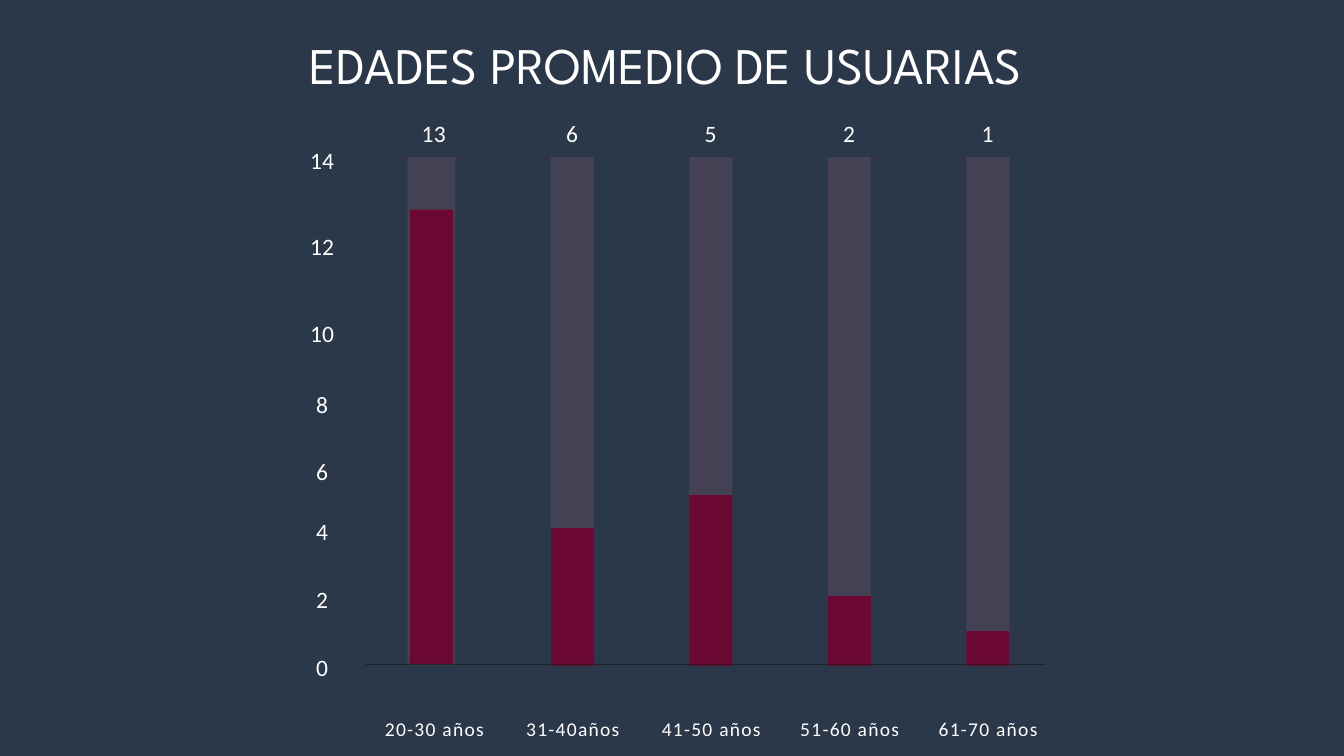
from lxml import etree
from pptx import Presentation
from pptx.dml.color import RGBColor
from pptx.enum.shapes import MSO_SHAPE
from pptx.enum.text import MSO_ANCHOR, MSO_AUTO_SIZE, PP_ALIGN
from pptx.oxml.ns import qn
from pptx.util import Inches, Pt

RECT = MSO_SHAPE.RECTANGLE
TOP = MSO_ANCHOR.TOP
CENTER = PP_ALIGN.CENTER
NO_FIT = MSO_AUTO_SIZE.NONE

NAVY = RGBColor(0x2B, 0x38, 0x49)
WHITE = RGBColor(0xFF, 0xFF, 0xFF)
CREAM = RGBColor(0xFF, 0xFE, 0xFE)
MAUVE = RGBColor(0x9C, 0x61, 0x7B)
WINE = RGBColor(0x6B, 0x08, 0x34)
BLACK = RGBColor(0x19, 0x19, 0x19)

COLS, ROWS = 20, 11.25
FIRST, STEP = 6.46, 2.06  # centre of the first bar, distance between bars
TRACK_TOP, BASE = 2.34, 9.9

# age group, value, top of bar
BARS = [
    ("20-30 años", "13", 3.12),
    ("31-40años", "6", 7.86),
    ("41-50 años", "5", 7.37),
    ("51-60 años", "2", 8.87),
    ("61-70 años", "1", 9.39),
]
# tick, top of its label
TICKS = [("14", 2.06), ("12", 3.34), ("10", 4.63), ("8", 5.69),
         ("6", 6.69), ("4", 7.58), ("2", 8.59), ("0", 9.6)]


class Board:
    """Slide style and current slide; lengths are grid columns and rows."""

    def __init__(self, deck):
        self.col = deck.slide_width / COLS
        self.row = deck.slide_height / ROWS
        self.slide = deck.slides.add_slide(deck.slide_layouts[5])
        fill = self.slide.background.fill
        fill.solid()
        fill.fore_color.rgb = NAVY

    def box(self, x, y, w, h):
        return (round(x * self.col), round(y * self.row),
                round(w * self.col), round(h * self.row))

    def label(self, shape, text, size, font, color, lead, gap=0):
        """Set one centred line; lead is line spacing, gap letter spacing."""
        frame = shape.text_frame
        frame.text = text
        frame.word_wrap = True
        frame.auto_size = NO_FIT
        frame.vertical_anchor = TOP
        frame.margin_left = frame.margin_right = 0
        frame.margin_top = frame.margin_bottom = 0
        line = frame.paragraphs[0]
        line.alignment = CENTER
        line.line_spacing = Pt(lead)
        run = line.runs[0]
        run.font.size = Pt(size)
        run.font.name = font
        run.font.color.rgb = color
        if gap:
            run._r.get_or_add_rPr().set("spc", str(round(gap * 100)))

    def title(self, text, x, y, w, h):
        shape = self.slide.shapes.title
        shape.left, shape.top, shape.width, shape.height = self.box(x, y, w, h)
        self.label(shape, text, 55, "League Spartan", WHITE, 77)

    def group(self, text, mid, y):
        """Age group below a bar."""
        shape = self.slide.shapes.add_textbox(*self.box(mid - 0.85, y, 1.71, 0.42))
        self.label(shape, text, 20.9, "Calibri", CREAM, 34.9, 1.4)

    def number(self, text, mid, y):
        shape = self.slide.shapes.add_textbox(*self.box(mid - 0.34, y, 0.67, 0.48))
        self.label(shape, text, 25.2, "Calibri", CREAM, 38.5, 0.2)

    def block(self, x, y, w, h, color, alpha=100):
        shape = self.slide.shapes.add_shape(RECT, *self.box(x, y, w, h))
        shape.shadow.inherit = False
        shape.line.fill.background()
        shape.fill.solid()
        shape.fill.fore_color.rgb = color
        if alpha < 100:
            tint = shape._element.spPr.find(".//" + qn("a:srgbClr"))
            etree.SubElement(tint, qn("a:alpha"), val=str(alpha * 1000))

    def bar(self, mid, y, wide, base):
        """Pale full-height track with the filled bar on it."""
        self.block(mid - wide / 2, TRACK_TOP, wide, BASE - TRACK_TOP, MAUVE, 23)
        self.block(mid - 0.32, y, 0.64, base - y, WINE)


def main():
    deck = Presentation()
    deck.slide_width, deck.slide_height = Inches(COLS), Inches(ROWS)
    board = Board(deck)
    board.title("EDADES PROMEDIO DE USUARIAS ", 2.49, 0.34, 15.02, 1.01)
    for i, (ages, value, top) in enumerate(BARS):
        mid = FIRST + i * STEP
        board.group(ages, mid, 10.53)
        board.number(value, mid, 1.65)
        if i == 0:
            board.bar(mid - 0.04, top, 0.71, 9.88)
        else:
            board.bar(mid, top, 0.64, 9.91)
    for tick, top in TICKS:
        board.number(tick, 4.8, top)
    board.block(5.44, 9.88, 10.11, 0.01, BLACK)
    deck.save("out.pptx")


if __name__ == "__main__":
    main()
